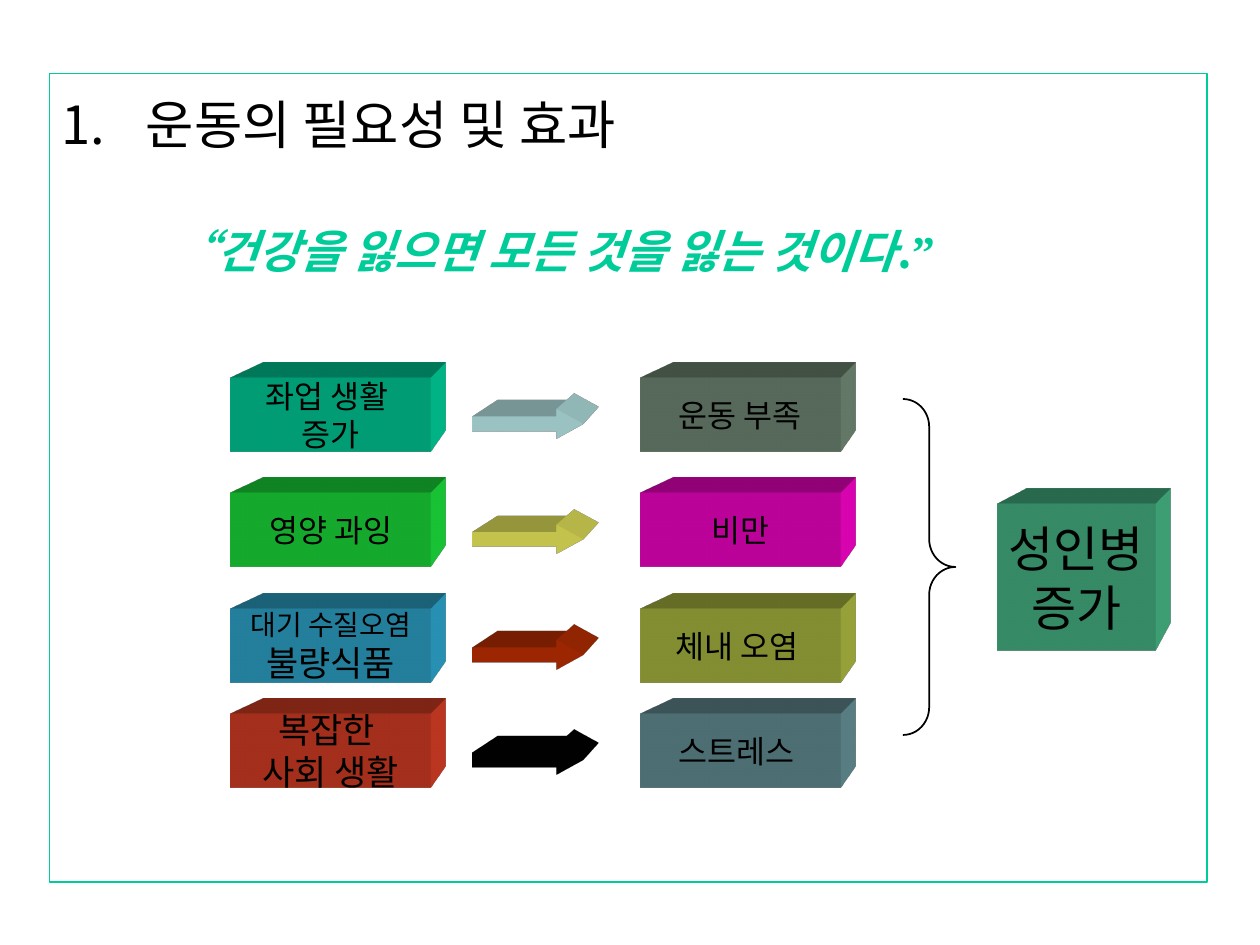
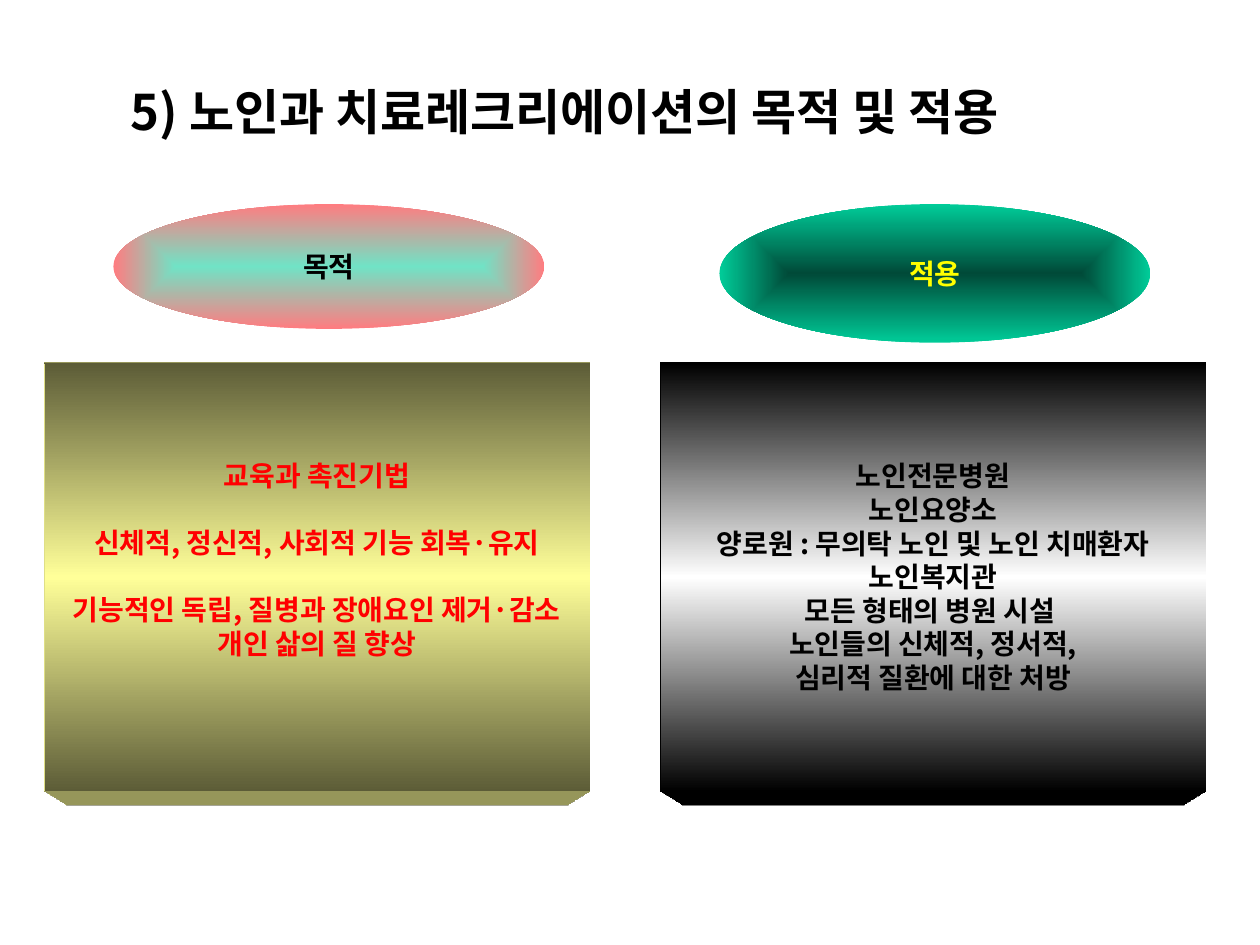
"""Builds two slides on exercise and recreation therapy for older people."""
from dataclasses import dataclass

import pptx
import pptx.dml.color
import pptx.enum.shapes
import pptx.enum.text
import pptx.oxml
import pptx.oxml.ns
import pptx.util

Inches, Pt = pptx.util.Inches, pptx.util.Pt
Shape = pptx.enum.shapes.MSO_SHAPE
Align = pptx.enum.text.PP_ALIGN
Anchor = pptx.enum.text.MSO_ANCHOR
qn = pptx.oxml.ns.qn


@dataclass(frozen=True)
class Theme:
    font: str = "Noto Sans CJK KR"
    serif: str = "Times New Roman"
    ink: str = "000000"
    mint: str = "00CC99"
    red: str = "FF0000"
    yellow: str = "FFFF00"
    head: int = 30
    title: int = 28
    quote: int = 26
    large: int = 20
    label: int = 18
    small: int = 16
    pitch: float = 1.2
    depth: int = 887400


def rgb(color):
    return pptx.dml.color.RGBColor.from_string(color)


def cells(*units):
    return [unit / 12 for unit in units]


class Deck:
    def __init__(self, theme):
        self.theme = theme
        self.prs = pptx.Presentation()
        self.prs.slide_width = Inches(10)
        self.prs.slide_height = Inches(7.5)
        self.slide = None

    def page(self):
        self.slide = self.prs.slides.add_slide(self.prs.slide_layouts[6])

    def shape(self, kind, box, fill=None, line=None, width=1):
        item = self.slide.shapes.add_shape(kind, *map(Inches, box))
        item.shadow.inherit = False
        if fill:
            item.fill.solid()
            item.fill.fore_color.rgb = rgb(fill)
        else:
            item.fill.background()
        if line:
            item.line.color.rgb = rgb(line)
            item.line.width = Pt(width)
        else:
            item.line.fill.background()
        return item

    def blend(self, item, stops, way):
        item.fill.gradient()
        marks = "".join(
            f'<a:gs pos="{pos * 1000}"><a:srgbClr val="{color}"/></a:gs>' for pos, color in stops)
        grad = pptx.oxml.parse_xml(
            f'<a:gradFill {pptx.oxml.ns.nsdecls("a")} rotWithShape="1">'
            f"<a:gsLst>{marks}</a:gsLst>{way}</a:gradFill>")
        props = item._element.spPr
        props.replace(props.find(qn("a:gradFill")), grad)

    def extrude(self, item, color, view="TopRight"):
        space = pptx.oxml.ns.nsdecls("a")
        bevels = "".join(f'<a:bevel{end} w="13500" h="13500" prst="angle"/>' for end in "TB")
        scene = (f'<a:scene3d {space}><a:camera prst="legacyPerspective{view}"/>'
                 '<a:lightRig rig="legacyFlat3" dir="b"/></a:scene3d>')
        solid = (f'<a:sp3d {space} extrusionH="{self.theme.depth}" prstMaterial="legacyMatte">'
                 f'{bevels}<a:extrusionClr><a:srgbClr val="{color}"/></a:extrusionClr></a:sp3d>')
        for part in (scene, solid):
            item._element.spPr.append(pptx.oxml.parse_xml(part))

    def run(self, para, text, size, color=None, bold=False, italic=False, font=None, east=None):
        run = para.add_run()
        run.text = text
        look = run.font
        look.size, look.bold, look.italic = Pt(size), bold, italic
        look.color.rgb = rgb(color or self.theme.ink)
        look.name = font or self.theme.font
        mark = look._element.makeelement(qn("a:ea"), {"typeface": east or look.name})
        look._element.find(qn("a:latin")).addnext(mark)

    def lines(self, item, rows, color=None, bold=False, foot=0.05):
        frame = item.text_frame
        frame.word_wrap = False
        frame.vertical_anchor = Anchor.MIDDLE
        frame.margin_bottom = Inches(foot)
        for i, (text, size, gap) in enumerate(rows):
            para = frame.paragraphs[0] if i == 0 else frame.add_paragraph()
            para.alignment = Align.CENTER
            para.line_spacing = Pt(size * self.theme.pitch)
            if gap:
                para.space_before = Pt(gap * size * self.theme.pitch)
            self.run(para, text, size, color, bold)

    def block(self, box, color, rows):
        item = self.shape(Shape.RECTANGLE, box, color)
        self.extrude(item, color)
        self.lines(item, rows)

    def arrow(self, box, color):
        item = self.shape(Shape.RIGHT_ARROW, box, color)
        item.adjustments[0], item.adjustments[1] = 0.5, 0.93
        self.extrude(item, color)

    def brace(self, box):
        item = self.shape(Shape.RIGHT_BRACE, box, line=self.theme.ink)
        item.adjustments[0], item.adjustments[1] = 0.53, 0.5

    def panel(self, box, edge, core, side, rows, color, foot=0.05):
        item = self.shape(Shape.RECTANGLE, box, core)
        self.blend(item, [(0, edge), (50, core), (100, edge)],
                   '<a:lin ang="5400000" scaled="1"/>')
        self.extrude(item, side, "Bottom")
        self.lines(item, rows, color, True, foot)

    def oval(self, box, core, rim, text, color):
        item = self.shape(Shape.OVAL, box, core)
        self.blend(item, [(0, core), (100, rim)],
                   '<a:path path="shape"><a:fillToRect l="50000" t="50000" '
                   'r="50000" b="50000"/></a:path>')
        self.lines(item, [(text, self.theme.small, 0)], color, True)

    def title(self, box, text):
        frame = self.slide.shapes.add_textbox(*map(Inches, box)).text_frame
        frame.word_wrap = True
        para = frame.paragraphs[0]
        para.line_spacing = Pt(self.theme.title * self.theme.pitch)
        self.run(para, text, self.theme.title, bold=True)

    def body(self, box, head, quote):
        t = self.theme
        frame = self.shape(Shape.RECTANGLE, box, line=t.mint, width=0.75).text_frame
        frame.word_wrap = True
        frame.vertical_anchor = Anchor.TOP
        para = frame.paragraphs[0]
        para.alignment = Align.LEFT
        para.line_spacing = Pt(43)
        props = para._p.get_or_add_pPr()
        props.set("marL", str(Inches(0.67)))
        props.set("indent", str(-Inches(0.67)))
        props.append(props.makeelement(qn("a:buAutoNum"), {"type": "arabicPeriod"}))
        self.run(para, head, t.head)
        para = frame.add_paragraph()
        para.alignment = Align.LEFT
        para.line_spacing = Pt(37)
        para.space_before = Pt(33)
        para._p.get_or_add_pPr().set("marL", str(Inches(0.87)))
        for text, slant, font, east in quote:
            self.run(para, text, t.quote, t.mint, True, slant, font, east)


def need(deck):
    t = deck.theme
    deck.page()
    deck.body((0.39, 7 / 12, 9.19, 77 / 12), "운동의 필요성 및 효과", [
        ("“", True, t.serif, t.font),
        ("건강을 잃으면 모든 것을 잃는 것이다", True, t.font, t.font),
        (".", False, t.font, t.font), ("”", False, t.serif, t.serif)])
    chains = [
        (36, t.mint, [("좌업 생활 ", t.label, 0), ("증가", t.label, 0)],
         "CCFFFF", "718975", "운동 부족"),
        (47, "1CDE3C", [("영양 과잉", t.label, 0)], "FFFF66", "F604C8", "비만"),
        (58, "2EA6CC", [("대기 수질오염", t.small, 0), ("불량식품", t.large, 0)],
         "CC3300", "ABB941", "체내 오염 "),
        (68, "D53E25", [("복잡한 ", t.large, 0), ("사회 생활", t.large, 0)],
         t.ink, "658F95", "스트레스 ")]
    for row, color, cause, dart, hue, effect in chains:
        deck.block(cells(22, row, 19, 7), color, cause)
        deck.arrow(cells(45, row + 3, 10.5, 2.75), dart)
        deck.block(cells(61, row, 19, 7), hue, [(effect, t.label, 0)])
    deck.brace(cells(86, 38, 5, 32))
    deck.block(cells(95, 48, 15, 14), "46B485",
               [("성인병", t.title, 0), ("증가", t.title, 0)])


def aims(deck):
    t = deck.theme
    deck.page()
    deck.title((0.94, 0.6, 7.97, 0.57), "5) 노인과 치료레크리에이션의 목적 및 적용")
    goals = [("교육과 촉진기법", 0), ("신체적, 정신적, 사회적 기능 회복·유지", 1),
             ("기능적인 독립, 질병과 장애요인 제거·감소", 1), ("개인 삶의 질 향상", 0)]
    places = ["노인전문병원", "노인요양소", "양로원 : 무의탁 노인 및 노인 치매환자",
              "노인복지관", "모든 형태의 병원 시설 ", " 노인들의 신체적, 정서적, ",
              "심리적 질환에 대한 처방"]
    deck.panel((0.35, 2.88, 4.33, 3.39), "5C5C37", "FFFF99", "FFFF99",
               [(text, t.small, gap) for text, gap in goals], t.red, 0.32)
    deck.panel((5.24, 2.88, 4.33, 3.39), t.ink, "FFFFFF", t.ink,
               [(text, t.small, 0) for text in places], t.ink)
    deck.oval((0.9, 1.62, 3.42, 0.99), "70E3C6", "FF7C80", "목적", t.ink)
    deck.oval((5.71, 1.62, 3.42, 1.1), "004A38", t.mint, "적용", t.yellow)


def main():
    deck = Deck(Theme())
    need(deck)
    aims(deck)
    deck.prs.save("out.pptx")


if __name__ == "__main__":
    main()
